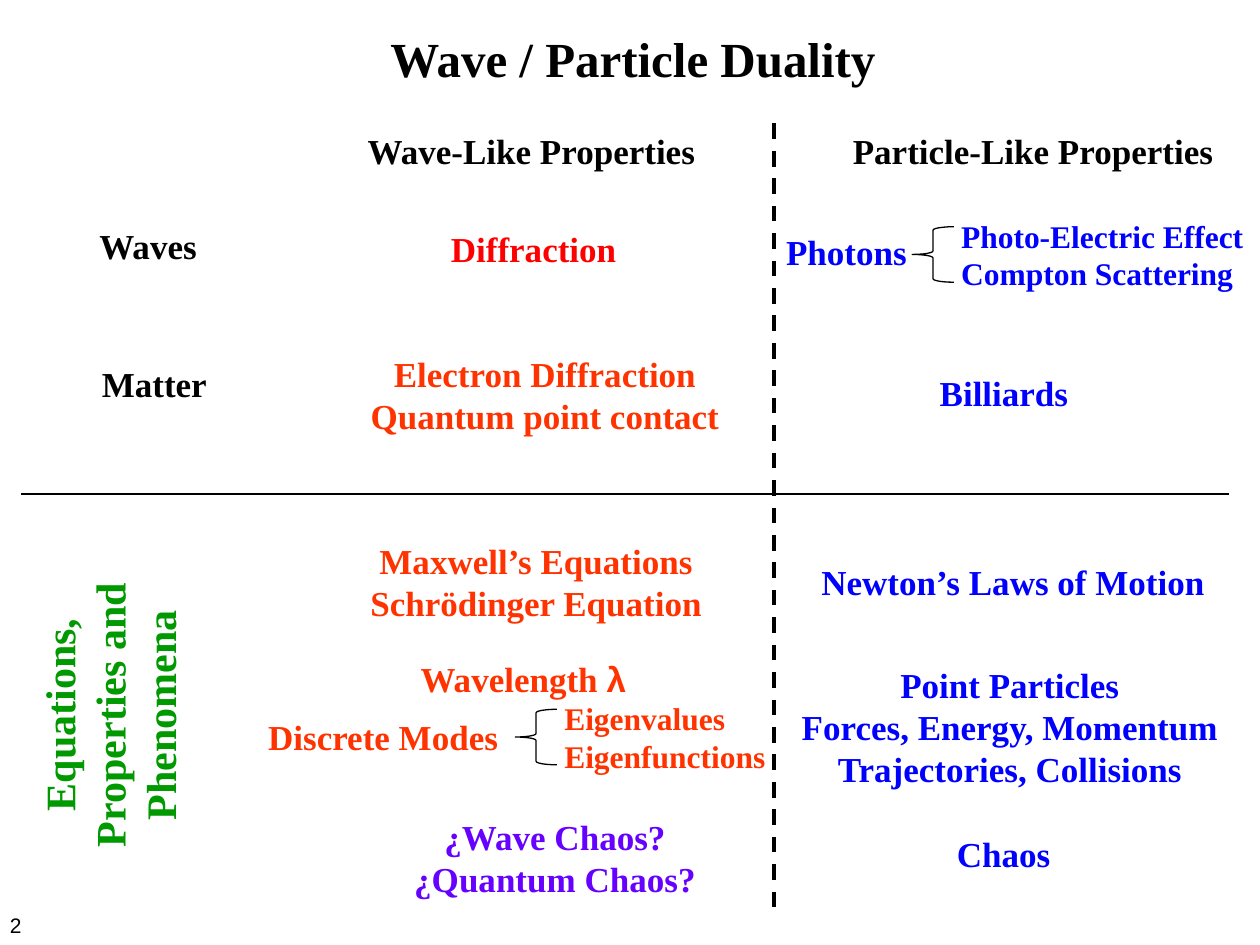
from dataclasses import dataclass

import lxml.etree
import pptx
import pptx.dml.color
import pptx.enum.dml
import pptx.enum.shapes
import pptx.enum.text
import pptx.oxml.ns
import pptx.slide
import pptx.util

Inches = pptx.util.Inches
RGBColor = pptx.dml.color.RGBColor
Align = pptx.enum.text.PP_ALIGN

BLACK = RGBColor(0x00, 0x00, 0x00)
RED = RGBColor(0xFF, 0x00, 0x00)
ORANGE = RGBColor(0xFF, 0x33, 0x00)
BLUE = RGBColor(0x00, 0x00, 0xFF)
PURPLE = RGBColor(0x66, 0x00, 0xFF)
GREEN = RGBColor(0x00, 0x99, 0x00)
SERIF = "Times New Roman"
SANS = "Arial"
DIVIDER_X = 6.14


@dataclass(frozen=True)
class Label:
    text: str
    left: float
    top: float
    width: float
    height: float = 0.44
    colour: RGBColor = BLACK
    size: int = 20
    align: Align = Align.LEFT
    font: str = SERIF
    bold: bool = True
    rotation: int = 0
    symbol: str = ""


@dataclass(frozen=True)
class Brace:
    left: float
    top: float
    width: float = 0.33
    height: float = 0.44


@dataclass(frozen=True)
class Rule:
    start: tuple[float, float]
    end: tuple[float, float]
    weight: float
    dashed: bool = False


LABELS = (
    Label("2", -0.02, 7.19, 0.4, 0.3, size=12, font=SANS, bold=False),
    Label("Wave / Particle Duality", 3, 0.18, 4.09, 0.57, size=28),
    Label("Wave-Like Properties", 2.82, 0.98, 2.82),
    Label("Particle-Like Properties", 6.67, 0.98, 3.08),
    Label("Waves", 0.69, 1.73, 0.98),
    Label("Diffraction", 3.48, 1.76, 1.52, colour=RED),
    Label("Photons", DIVIDER_X, 1.78, 1.17, colour=BLUE),
    Label("Photo-Electric Effect\nCompton Scattering", 7.53, 1.67, 2.47, 0.71, BLUE, 18),
    Label("Matter", 0.71, 2.83, 1.04),
    Label("Electron Diffraction\nQuantum point contact", 2.83, 2.75, 2.99, 0.77,
          ORANGE, align=Align.CENTER),
    Label("Billiards", 7.36, 2.9, 1.23, colour=BLUE),
    Label("Equations,\nProperties and\nPhenomena", -0.29, 5.02, 2.32, 1.31,
          GREEN, 24, Align.CENTER, rotation=270),
    Label("Maxwell’s Equations\nSchrödinger Equation", 2.83, 4.23, 2.85, 0.77,
          ORANGE, align=Align.CENTER),
    Label("Newton’s Laws of Motion", 6.42, 4.4, 3.27, colour=BLUE),
    Label("Wavelength ", 3.24, 5.17, 1.84, colour=ORANGE, symbol="λ"),
    Label("Discrete Modes", 2.03, 5.63, 2.04, colour=ORANGE),
    Label("Eigenvalues\nEigenfunctions", 4.38, 5.5, 1.81, 0.71, ORANGE, 18),
    Label("Point Particles\nForces, Energy, Momentum\nTrajectories, Collisions",
          6.25, 5.22, 3.53, 1.11, BLUE, align=Align.CENTER),
    Label("¿Wave Chaos?\n¿Quantum Chaos?", 3.18, 6.42, 2.45, 0.77,
          PURPLE, align=Align.CENTER),
    Label("Chaos", 7.49, 6.56, 0.95, colour=BLUE, align=Align.CENTER),
)
BRACES = (Brace(7.24, 1.8), Brace(4.09, 5.63))
RULES = (
    Rule((0.17, 3.92), (9.75, 3.92), 0.75),
    Rule((DIVIDER_X, 0.98), (DIVIDER_X, 7.25), 2.25, dashed=True),
)


def add_span(para, text: str, *, font: str, size: int, colour: RGBColor, bold: bool) -> None:
    span = para.add_run()
    span.text = text
    span.font.name = font
    span.font.size = pptx.util.Pt(size)
    span.font.bold = bold
    span.font.color.rgb = colour


def draw_label(page: pptx.slide.Slide, label: Label) -> None:
    box = page.shapes.add_textbox(
        Inches(label.left), Inches(label.top), Inches(label.width), Inches(label.height)
    )
    box.rotation = label.rotation
    frame = box.text_frame
    frame.word_wrap = False
    frame.auto_size = pptx.enum.text.MSO_AUTO_SIZE.SHAPE_TO_FIT_TEXT
    style = {"size": label.size, "colour": label.colour, "bold": label.bold}
    for index, text in enumerate(label.text.split("\n")):
        para = frame.add_paragraph() if index else frame.paragraphs[0]
        para.alignment = label.align
        add_span(para, text, font=label.font, **style)
    if label.symbol:
        add_span(para, label.symbol, font=SANS, **style)


def draw_brace(page: pptx.slide.Slide, brace: Brace) -> None:
    shape = page.shapes.add_shape(
        pptx.enum.shapes.MSO_SHAPE.LEFT_BRACE,
        Inches(brace.left), Inches(brace.top), Inches(brace.width), Inches(brace.height),
    )
    shape.shadow.inherit = False
    shape.fill.background()
    shape.line.color.rgb = BLACK
    shape.line.width = pptx.util.Pt(0.75)


def draw_rule(page: pptx.slide.Slide, rule: Rule) -> None:
    line = page.shapes.add_connector(
        pptx.enum.shapes.MSO_CONNECTOR.STRAIGHT,
        *(Inches(value) for value in rule.start + rule.end),
    )
    line.line.color.rgb = BLACK
    line.line.width = pptx.util.Pt(rule.weight)
    if rule.dashed:
        line.line.dash_style = pptx.enum.dml.MSO_LINE.DASH
    lxml.etree.SubElement(line._element.spPr, pptx.oxml.ns.qn("a:effectLst"))


def main() -> None:
    deck = pptx.Presentation()
    deck.slide_width = Inches(10)
    deck.slide_height = Inches(7.5)
    page = deck.slides.add_slide(deck.slide_layouts[6])
    for label in LABELS:
        draw_label(page, label)
    for brace in BRACES:
        draw_brace(page, brace)
    for rule in RULES:
        draw_rule(page, rule)
    deck.save("out.pptx")


if __name__ == "__main__":
    main()
